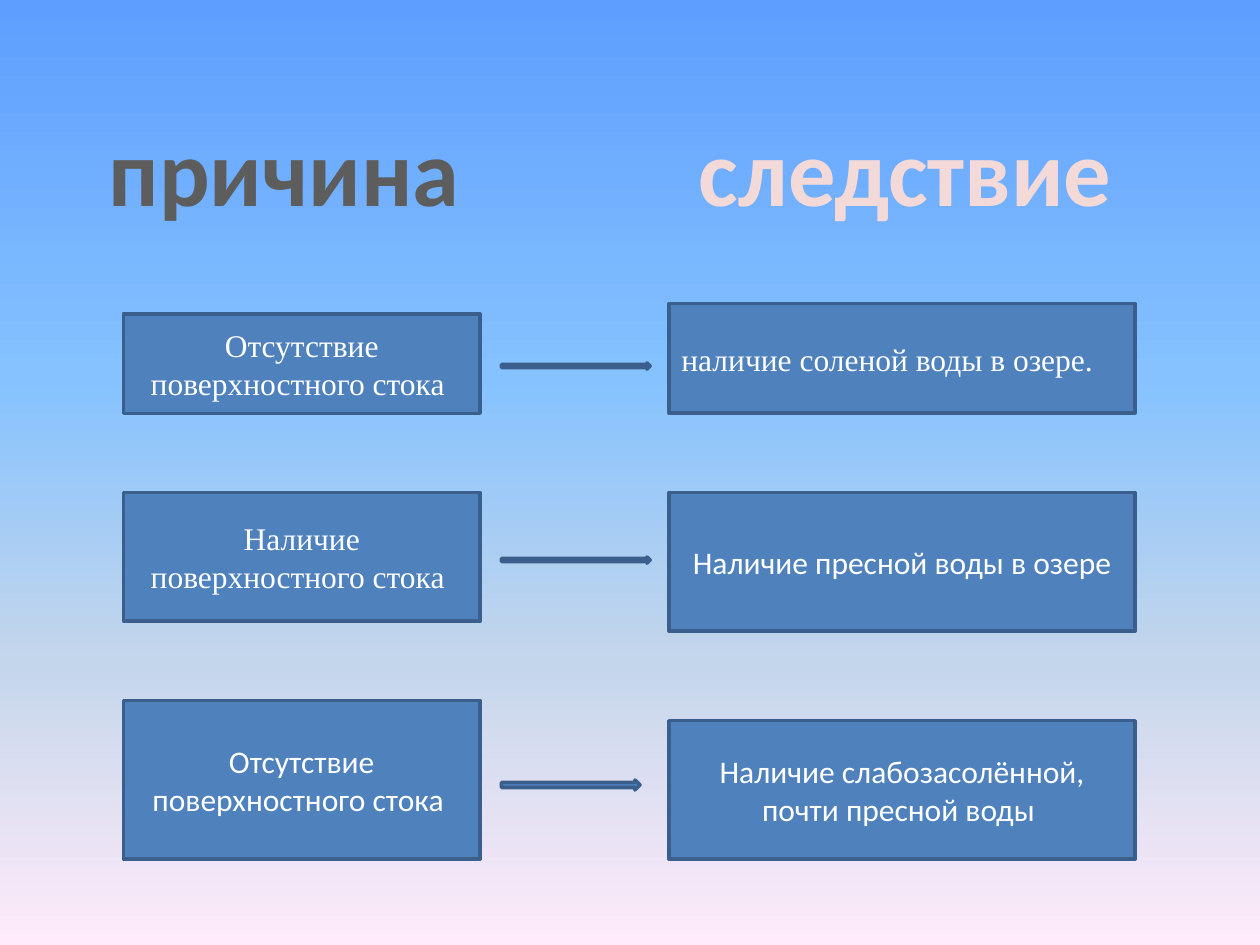
from lxml import etree
from pptx import Presentation
from pptx.dml.color import RGBColor
from pptx.enum.shapes import MSO_SHAPE
from pptx.enum.text import MSO_ANCHOR, MSO_AUTO_SIZE, PP_ALIGN
from pptx.oxml.ns import qn
from pptx.util import Inches, Pt

RECTANGLE, ARROW = MSO_SHAPE.RECTANGLE, MSO_SHAPE.RIGHT_ARROW
LEFT, CENTER = PP_ALIGN.LEFT, PP_ALIGN.CENTER
MIDDLE = MSO_ANCHOR.MIDDLE
FIT_SHAPE = MSO_AUTO_SIZE.SHAPE_TO_FIT_TEXT

SANS, SERIF = "Calibri", "Times New Roman"
BLUE, DARK_BLUE, WHITE = "4F81BD", "3A5F8C", "FFFFFF"
SKY = [(0, "5E9EFF"), (40, "85C2FF"), (70, "C4D6EB"), (100, "FFEBFA")]

# Columns of the scheme: left edge and width
CAUSE, LINK, EFFECT = (0.98, 2.83), (3.98, 1.18), (5.31, 3.7)

HEADINGS = [("причина", 0.75, 3.01, "5D5D5D"),
            ("следствие", 5.43, 3.51, "F3D9D8")]

# Each row: cause and effect as (text, font, alignment, top, height),
# arrow as (top, width, height)
ROWS = [
    (("Отсутствие поверхностного стока ", SERIF, CENTER, 2.49, 0.79),
     (2.88, LINK[1], 0.05),
     ("наличие соленой воды в озере.", SERIF, LEFT, 2.41, 0.87)),
    (("Наличие поверхностного стока ", SERIF, CENTER, 3.91, 1.02),
     (4.42, LINK[1], 0.05),
     ("Наличие пресной воды в озере", SANS, CENTER, 3.91, 1.1)),
    (("Отсутствие поверхностного стока ", SANS, CENTER, 5.56, 1.26),
     (6.19, 1.1, 0.08),
     ("Наличие слабозасолённой, почти пресной воды ", SANS, CENTER, 5.72, 1.1)),
]


def color(hex_value):
    return RGBColor.from_string(hex_value)


def paint_background(slide, stops):
    """Fill the background from top to bottom with (percent, colour) stops."""
    fill = slide.background.fill
    fill.gradient()
    fill.gradient_angle = 270
    stop_list = slide.element.find(".//" + qn("a:gsLst"))
    for old_stop in list(stop_list):
        stop_list.remove(old_stop)
    for percent, hex_value in stops:
        stop = etree.SubElement(stop_list, qn("a:gs"), pos=str(percent * 1000))
        etree.SubElement(stop, qn("a:srgbClr"), val=hex_value)


def write(frame, text, font_name, size, hex_value, align=CENTER, bold=False):
    paragraph = frame.paragraphs[0]
    paragraph.text = text
    paragraph.alignment = align
    font = paragraph.font
    font.name, font.size, font.bold = font_name, Pt(size), bold
    font.color.rgb = color(hex_value)


def add_heading(slide, text, left, width, hex_value):
    heading = slide.shapes.add_textbox(
        Inches(left), Inches(0.84), Inches(width), Inches(1.01))
    frame = heading.text_frame
    frame.word_wrap = False
    frame.auto_size = FIT_SHAPE
    write(frame, text, SANS, 54, hex_value, bold=True)


def add_blue_shape(slide, kind, left, top, width, height):
    shape = slide.shapes.add_shape(
        kind, Inches(left), Inches(top), Inches(width), Inches(height))
    shape.shadow.inherit = False
    shape.fill.solid()
    shape.fill.fore_color.rgb = color(BLUE)
    shape.line.color.rgb = color(DARK_BLUE)
    shape.line.width = Pt(2)
    return shape


def add_statement(slide, column, text, font_name, align, top, height):
    left, width = column
    box = add_blue_shape(slide, RECTANGLE, left, top, width, height)
    box.text_frame.word_wrap = True
    box.text_frame.vertical_anchor = MIDDLE
    write(box.text_frame, text, font_name, 18, WHITE, align)


def main():
    prs = Presentation()
    prs.slide_width, prs.slide_height = Inches(10), Inches(7.5)
    slide = prs.slides.add_slide(prs.slide_layouts[6])
    paint_background(slide, SKY)
    for heading in HEADINGS:
        add_heading(slide, *heading)
    for cause, arrow, effect in ROWS:
        add_statement(slide, CAUSE, *cause)
        add_blue_shape(slide, ARROW, LINK[0], *arrow)
        add_statement(slide, EFFECT, *effect)
    prs.save("out.pptx")


if __name__ == "__main__":
    main()
